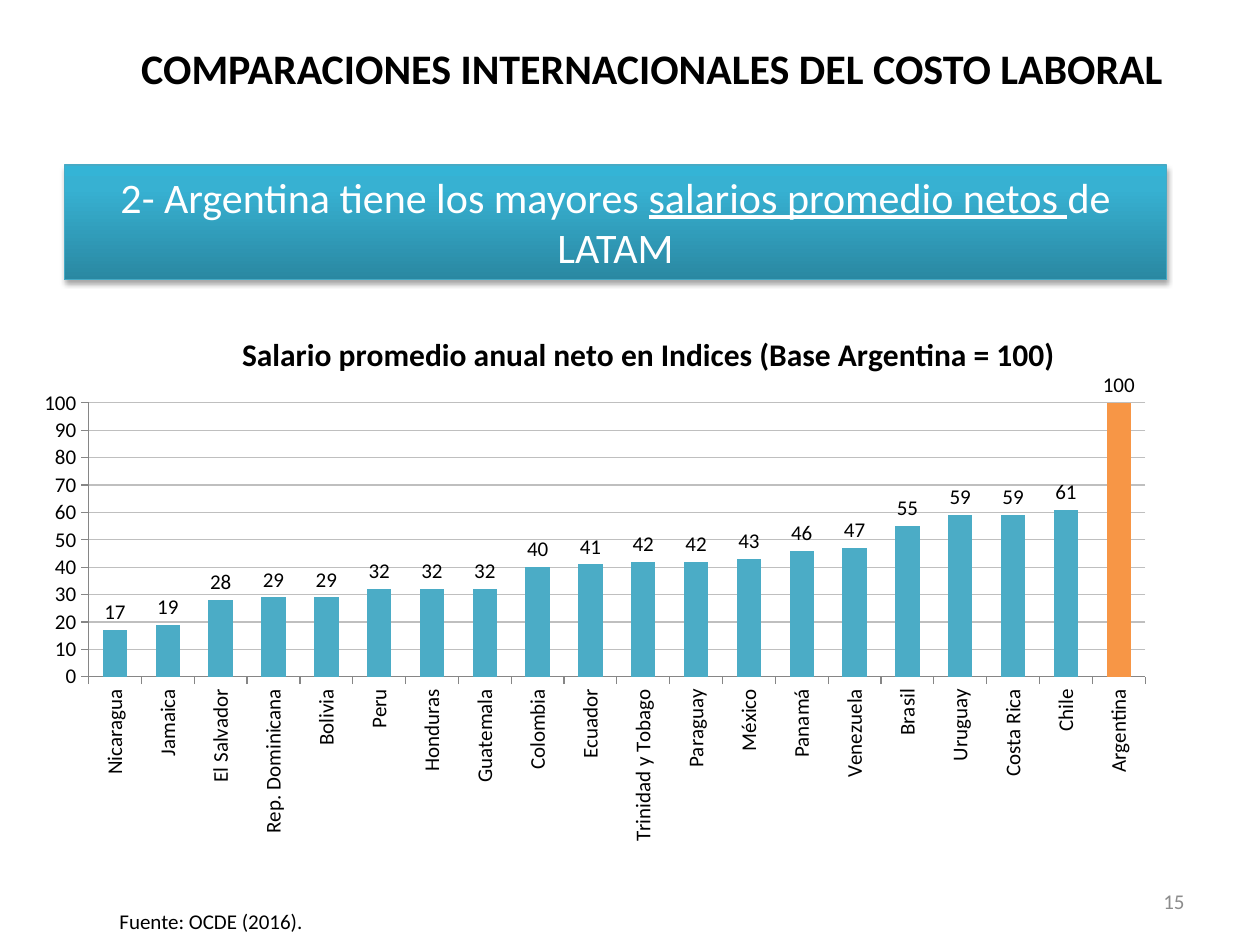
from copy import deepcopy

from lxml.etree import SubElement
from pptx import Presentation
from pptx.chart.data import CategoryChartData
from pptx.dml.color import RGBColor
from pptx.enum.chart import XL_CHART_TYPE as ChartType, XL_LABEL_POSITION as LabelPosition
from pptx.enum.chart import XL_TICK_MARK as TickMark
from pptx.enum.shapes import MSO_SHAPE as Shape
from pptx.enum.text import MSO_ANCHOR as Anchor, PP_ALIGN as Align
from pptx.oxml.ns import qn
from pptx.util import Inches, Pt

FONT = "Calibri"
BLACK = RGBColor(0x00, 0x00, 0x00)
WHITE = RGBColor(0xFF, 0xFF, 0xFF)
GRAY = RGBColor(0x8C, 0x8C, 0x8C)
AXIS_GRAY = RGBColor(0x86, 0x86, 0x86)
GRID_GRAY = RGBColor(0xBF, 0xBF, 0xBF)
TEAL = RGBColor(0x4B, 0xAC, 0xC6)
ORANGE = RGBColor(0xF7, 0x96, 0x46)
BANNER_LINE = RGBColor(0x46, 0xAA, 0xC5)
BANNER_STOPS = [
    (0, RGBColor(0x2A, 0x88, 0xA2)),
    (0.8, RGBColor(0x37, 0xB1, 0xD2)),
    (1, RGBColor(0x34, 0xB4, 0xD6)),
]

SALARY_INDEX = {
    "Nicaragua": 17, "Jamaica": 19, "El Salvador": 28, "Rep. Dominicana": 29,
    "Bolivia": 29, "Peru": 32, "Honduras": 32, "Guatemala": 32,
    "Colombia": 40, "Ecuador": 41, "Trinidad y Tobago": 42, "Paraguay": 42,
    "México": 43, "Panamá": 46, "Venezuela": 47, "Brasil": 55,
    "Uruguay": 59, "Costa Rica": 59, "Chile": 61, "Argentina": 100,
}


def style_font(font, size, color=BLACK, bold=False):
    font.name = FONT
    font.size = Pt(size)
    font.bold = bold
    font.color.rgb = color


def write_text(frame, *parts, size, color=BLACK, bold=False, align=Align.CENTER,
               anchor=Anchor.TOP, wrap=True, underlined=()):
    """Write the parts as runs of one paragraph; underlined holds part indexes."""
    frame.word_wrap = wrap
    frame.vertical_anchor = anchor
    paragraph = frame.paragraphs[0]
    paragraph.alignment = align
    for index, part in enumerate(parts):
        run = paragraph.add_run()
        run.text = part
        style_font(run.font, size, color, bold)
        if index in underlined:
            run.font.underline = True


def add_text(slide, text, left, top, width, height, **text_format):
    box = slide.shapes.add_textbox(Inches(left), Inches(top), Inches(width), Inches(height))
    write_text(box.text_frame, text, **text_format)


def fill_gradient(shape, stops, angle):
    shape.fill.gradient()
    shape.fill.gradient_angle = angle
    stop_list = shape.element.spPr.find(".//" + qn("a:gsLst"))
    while len(stop_list) < len(stops):
        stop_list.append(deepcopy(stop_list[0]))
    for stop, (position, color) in zip(shape.fill.gradient_stops, stops):
        stop.position = position
        stop.color.rgb = color


def add_shadow(shape, blur, distance, opacity):
    """Cast a black shadow straight down."""
    shape.shadow.inherit = False
    effects = shape.element.spPr.find(qn("a:effectLst"))
    shadow = SubElement(effects, qn("a:outerShdw"), blurRad=str(Pt(blur)),
                        dist=str(Pt(distance)), dir="5400000", rotWithShape="0")
    color = SubElement(shadow, qn("a:srgbClr"), val=str(BLACK))
    SubElement(color, qn("a:alpha"), val=str(opacity * 1000))


def add_banner(slide):
    banner = slide.shapes.add_shape(
        Shape.RECTANGLE, Inches(0.51), Inches(1.31), Inches(8.75), Inches(0.91))
    fill_gradient(banner, BANNER_STOPS, 90)
    banner.line.color.rgb = BANNER_LINE
    banner.line.width = Pt(0.75)
    add_shadow(banner, blur=3.1, distance=1.8, opacity=35)
    write_text(banner.text_frame, "2- Argentina tiene los mayores ",
               "salarios promedio netos ", "de LATAM",
               size=24, color=WHITE, underlined=(1,))


def place(element, successors, inner=False, **fractions):
    """Give a chart part a manual layout in fractions of the chart."""
    old_layout = element.find(qn("c:layout"))
    if old_layout is not None:
        element.remove(old_layout)
    layout = SubElement(element, qn("c:layout"))
    manual = SubElement(layout, qn("c:manualLayout"))
    if inner:
        SubElement(manual, qn("c:layoutTarget"), val="inner")
    for side in ("x", "y"):
        SubElement(manual, qn(f"c:{side}Mode"), val="edge")
    for name, fraction in fractions.items():
        SubElement(manual, qn(f"c:{name}"), val=str(fraction))
    for tag in successors:
        following = element.find(qn(tag))
        if following is not None:
            following.addprevious(layout)
            break


def style_axis(axis):
    style_font(axis.tick_labels.font, 12)
    axis.major_tick_mark = TickMark.OUTSIDE
    axis.minor_tick_mark = TickMark.NONE
    axis.format.line.color.rgb = AXIS_GRAY
    axis.format.line.width = Pt(0.75)


def style_series(series):
    series.format.fill.solid()
    series.format.fill.fore_color.rgb = TEAL
    highlight = series.points[list(SALARY_INDEX).index("Argentina")].format.fill
    highlight.solid()
    highlight.fore_color.rgb = ORANGE
    labels = series.data_labels
    labels.show_value = True
    labels.number_format = "#,##0"
    labels.number_format_is_linked = False
    labels.position = LabelPosition.OUTSIDE_END
    style_font(labels.font, 12)


def add_salary_chart(slide):
    data = CategoryChartData()
    data.categories = list(SALARY_INDEX)
    data.add_series("Series 1", list(SALARY_INDEX.values()))
    chart = slide.shapes.add_chart(
        ChartType.COLUMN_CLUSTERED, Inches(0), Inches(2.46), Inches(9.38), Inches(4.5), data).chart
    style_font(chart.font, 10)
    chart.has_legend = False

    title = chart.chart_title
    write_text(title.text_frame, "Salario promedio anual neto en Indices (Base Argentina = 100)",
               size=18, bold=True)
    title.include_in_layout = True
    place(title._element, ["c:overlay"], x=0.2, y=0.03)

    plot = chart.plots[0]
    plot.gap_width = 116
    plot.vary_by_categories = False
    style_series(plot.series[0])
    place(plot._element.getparent(), ["c:barChart"], inner=True, x=0.075, y=0.164, w=0.894, h=0.483)

    countries, index_axis = chart.category_axis, chart.value_axis
    for axis in (countries, index_axis):
        style_axis(axis)
    countries.tick_labels.font._element.getparent().getparent().getparent().find(
        qn("a:bodyPr")).set("rot", "-5400000")
    index_axis.minimum_scale = 0
    index_axis.maximum_scale = 100
    index_axis.major_unit = 10
    index_axis.has_major_gridlines = True
    index_axis.major_gridlines.format.line.color.rgb = GRID_GRAY
    index_axis.major_gridlines.format.line.width = Pt(0.75)


def main():
    presentation = Presentation()
    presentation.slide_width = Inches(10)
    presentation.slide_height = Inches(7.5)
    slide = presentation.slides.add_slide(presentation.slide_layouts[6])
    add_text(slide, "15", 7.17, 6.95, 2.33, 0.4, size=12, color=GRAY,
             align=Align.RIGHT, anchor=Anchor.MIDDLE)
    add_text(slide, "COMPARACIONES INTERNACIONALES DEL COSTO LABORAL",
             0.35, 0.29, 9.65, 0.5, size=24, bold=True)
    add_text(slide, "Fuente: OCDE (2016).", 0.83, 7.16, 1.69, 0.3, size=12, wrap=False)
    add_banner(slide)
    add_salary_chart(slide)
    presentation.save("out.pptx")


if __name__ == "__main__":
    main()
